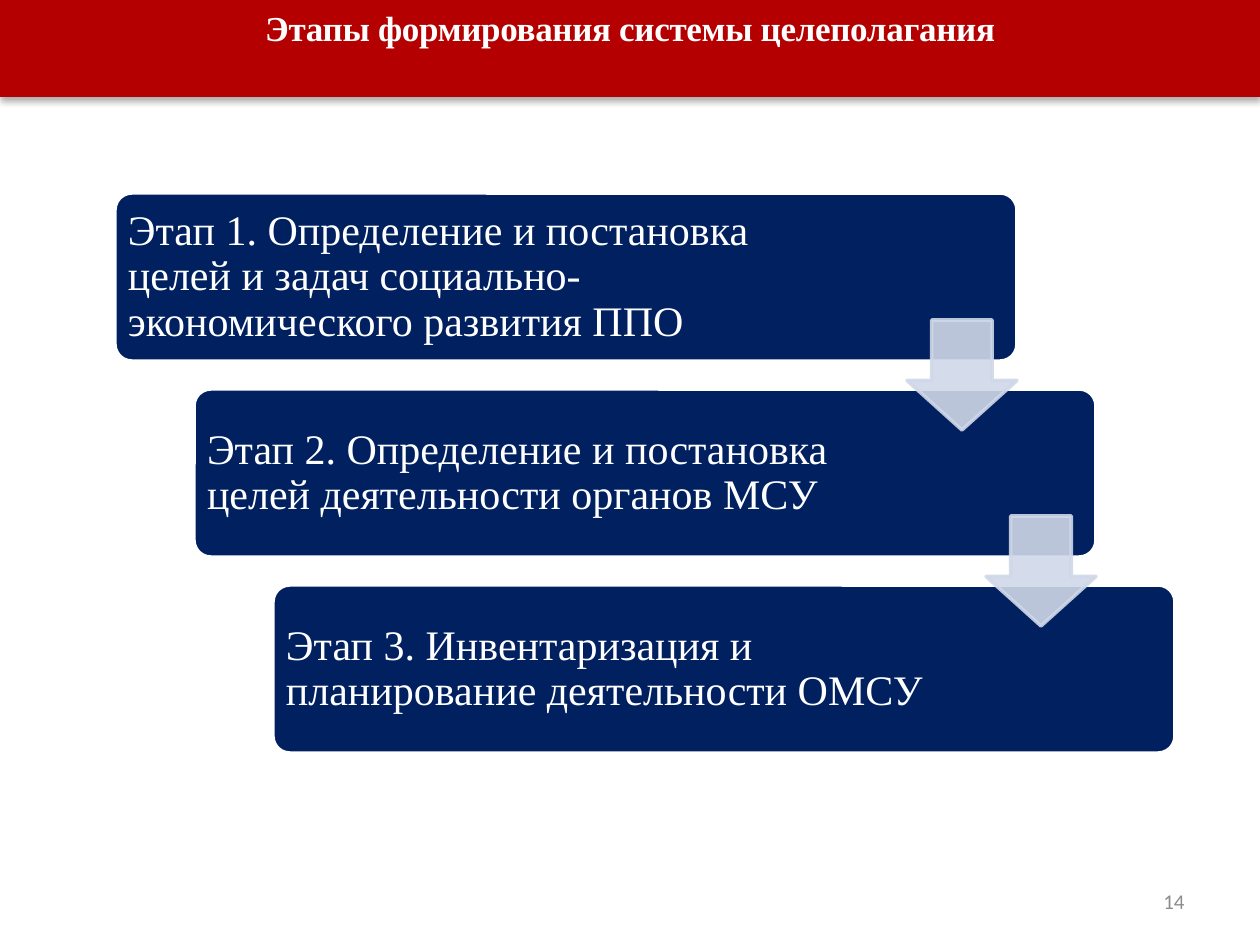
from dataclasses import dataclass

from lxml.etree import SubElement
from pptx import Presentation
from pptx.dml.color import RGBColor
from pptx.enum.shapes import MSO_SHAPE as Preset
from pptx.enum.text import MSO_ANCHOR as Anchor, PP_ALIGN as Align
from pptx.oxml.ns import qn
from pptx.util import Emu, Pt

PX = 914400 / 126
COLORS = {
    "banner": "B40000",
    "step": "002060",
    "arrow": "D0D8E8",
    "white": "FFFFFF",
    "number": "8C8C8C",
    "shadow": "000000",
}
SERIF = "Times New Roman"
STEP_RIGHT, STEP_DOWN = 79, 196


@dataclass(frozen=True)
class Area:
    left: int
    top: int
    width: int
    height: int

    def stepped(self, index: int) -> "Area":
        """Return this area moved down the staircase by index steps."""
        return Area(self.left + index * STEP_RIGHT, self.top + index * STEP_DOWN,
                    self.width, self.height)

    def emu(self) -> list[Emu]:
        return [px(n) for n in (self.left, self.top, self.width, self.height)]


@dataclass(frozen=True)
class Step:
    text: str
    text_width: int


@dataclass(frozen=True)
class Style:
    size: int
    color: str = "white"
    font: str = SERIF
    bold: bool = False
    align: Align = Align.LEFT
    anchor: Anchor = Anchor.MIDDLE
    line_spacing: float = 1.0


STEPS = [
    Step("Этап 1. Определение и постановка целей и задач "
         "социально-экономического развития ППО", 731),
    Step("Этап 2. Определение и постановка целей деятельности органов МСУ", 713),
    Step("Этап 3. Инвентаризация и планирование деятельности ОМСУ", 713),
]
BANNER = Area(0, 0, 1260, 97)
FIRST_STEP = Area(115, 193, 902, 168)
FIRST_ARROW = Area(907, 320, 110, 110)
PAGE_NUMBER = Area(903, 876, 294, 50)
TITLE_STYLE = Style(20, bold=True, align=Align.CENTER, anchor=Anchor.TOP)
STEP_STYLE = Style(24, line_spacing=0.9)
NUMBER_STYLE = Style(12, "number", "Calibri", align=Align.RIGHT)


def px(length: int) -> Emu:
    return Emu(round(length * PX))


def rgb(name: str) -> RGBColor:
    return RGBColor.from_string(COLORS[name])


def write(shape, text: str, style: Style):
    """Put one styled paragraph into the shape and return its run."""
    frame = shape.text_frame
    frame.text = text
    frame.word_wrap = True
    frame.vertical_anchor = style.anchor
    para = frame.paragraphs[0]
    para.alignment = style.align
    para.line_spacing = style.line_spacing
    span = para.runs[0]
    span.font.name = style.font
    span.font.size = Pt(style.size)
    span.font.bold = style.bold
    span.font.color.rgb = rgb(style.color)
    return span


def add_preset(page, preset: Preset, area: Area, fill: str, line: str | None = None,
               adjustments: tuple[float, ...] = ()):
    shape = page.shapes.add_shape(preset, *area.emu())
    shape.shadow.inherit = False
    shape.fill.solid()
    shape.fill.fore_color.rgb = rgb(fill)
    if line:
        shape.line.color.rgb = rgb(line)
        shape.line.width = Pt(2)
    else:
        shape.line.fill.background()
    for index, value in enumerate(adjustments):
        shape.adjustments[index] = value
    return shape


def add_banner(page, title: str) -> None:
    banner = add_preset(page, Preset.RECTANGLE, BANNER, "banner")
    effects = banner.element.spPr.find(qn("a:effectLst"))
    shadow = SubElement(effects, qn("a:outerShdw"), blurRad=str(Pt(3.5)),
                        dist=str(Pt(2.2)), dir="5400000", rotWithShape="0")
    color = SubElement(shadow, qn("a:srgbClr"), val=COLORS["shadow"])
    SubElement(color, qn("a:alpha"), val="32000")
    span = write(banner, title, TITLE_STYLE)
    span.font._element.set("spc", "-20")


def add_step(page, step: Step, index: int) -> None:
    area = FIRST_STEP.stepped(index)
    add_preset(page, Preset.ROUNDED_RECTANGLE, area, "step", "white", (0.1,))
    text_area = Area(area.left, area.top, step.text_width, area.height)
    box = page.shapes.add_textbox(*text_area.emu())
    frame = box.text_frame
    frame.margin_left = frame.margin_right = px(13)
    frame.margin_top = frame.margin_bottom = px(13)
    write(box, step.text, STEP_STYLE)


def add_arrow(page, index: int) -> None:
    arrow = add_preset(page, Preset.DOWN_ARROW, FIRST_ARROW.stepped(index),
                       "arrow", "arrow", (0.55, 0.45))
    for color in arrow.element.spPr.iter(qn("a:srgbClr")):
        SubElement(color, qn("a:alpha"), val="90000")


def main() -> None:
    deck = Presentation()
    deck.slide_width, deck.slide_height = px(1260), px(945)
    page = deck.slides.add_slide(deck.slide_layouts[6])
    number = page.shapes.add_textbox(*PAGE_NUMBER.emu())
    write(number, "14", NUMBER_STYLE)
    add_banner(page, "Этапы формирования системы целеполагания")
    for index, step in enumerate(STEPS):
        add_step(page, step, index)
    for index in range(len(STEPS) - 1):
        add_arrow(page, index)
    deck.save("out.pptx")


if __name__ == "__main__":
    main()
